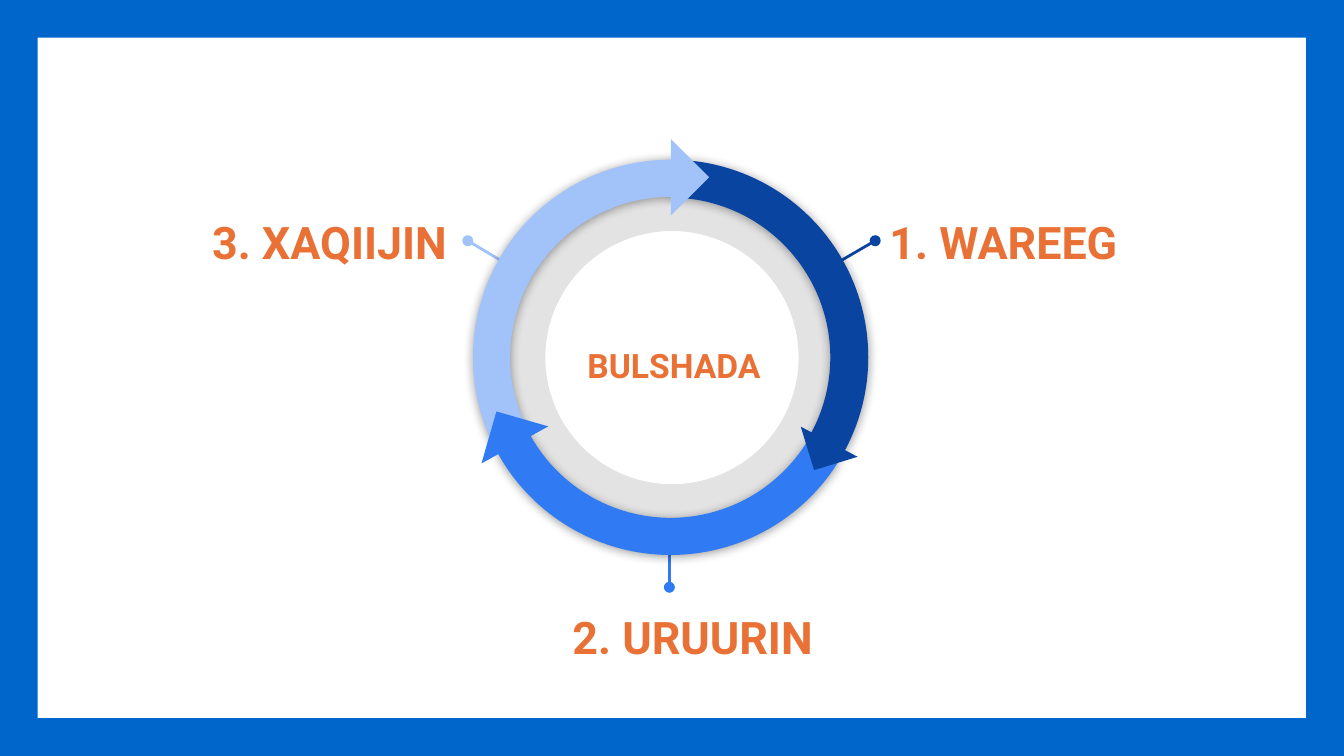
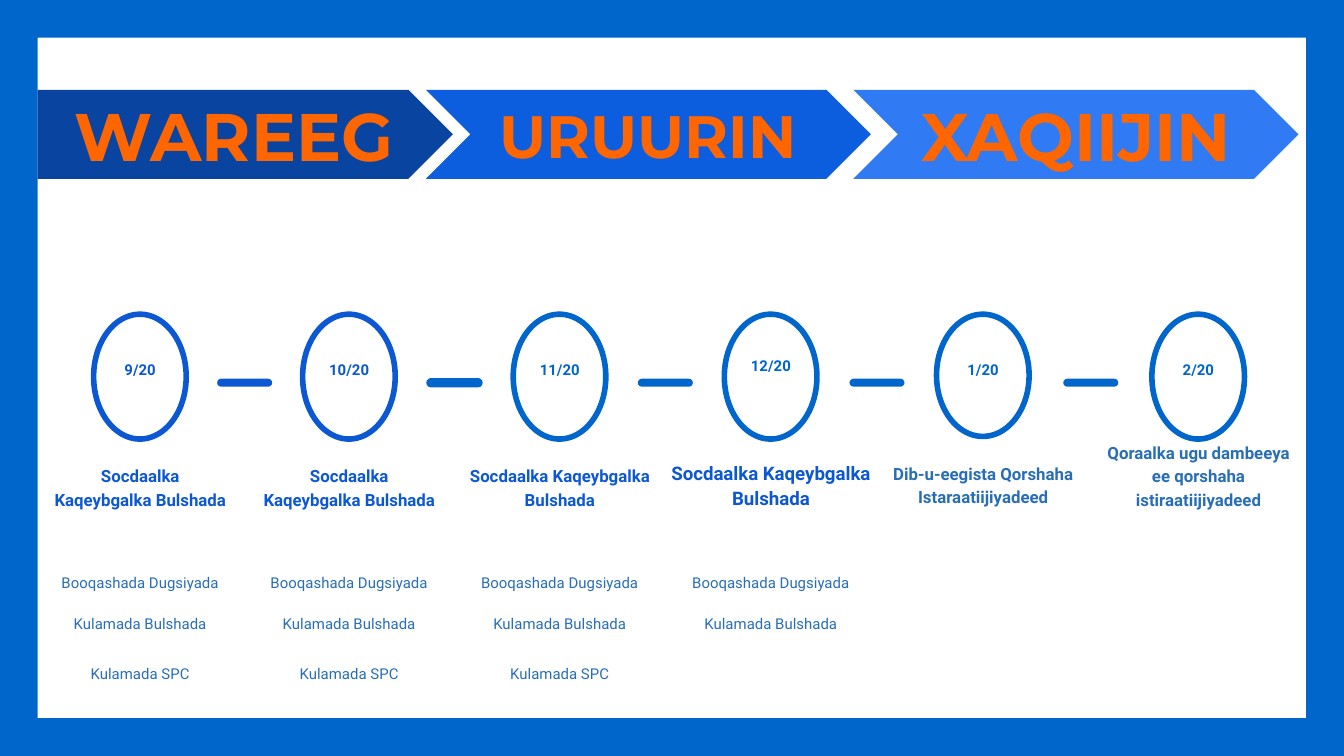
from dataclasses import dataclass

from lxml import etree
from pptx import Presentation
from pptx.dml.color import RGBColor
from pptx.enum import shapes, text
from pptx.oxml.ns import qn
from pptx.util import Cm, Pt

SHAPE = shapes.MSO_SHAPE
ANCHOR = text.MSO_ANCHOR
ALIGN = text.PP_ALIGN

FRAME_BLUE = "0066CC"
NAVY = "0944A1"
ROYAL = "0C58D3"
BANNER_BLUE = "0D5DDF"
BRIGHT = "307BF3"
PALE = "A1C3FA"
STEEL = "286EB7"
ORANGE = "E97135"
VIVID_ORANGE = "FF6600"


def color(value):
    return RGBColor.from_string(value)


def add_xml(parent, tag, **attributes):
    """Append a DrawingML element and return it."""
    return etree.SubElement(parent, qn(f"a:{tag}"), attributes)


@dataclass
class Span:
    """How a piece of text looks."""
    size: float
    color: str
    bold: bool = True
    font: str = "Roboto"


class Painter:
    def __init__(self):
        self.deck = Presentation()
        self.deck.slide_width = Cm(25.4)
        self.deck.slide_height = Cm(14.29)
        self.layout = self.deck.slide_layouts[6]
        self.page = None

    def new_page(self):
        self.page = self.deck.slides.add_slide(self.layout)

    def frame_layout(self):
        """Put the blue frame on the layout that every slide uses."""
        frame = self.shape(SHAPE.FRAME, 0, 0, 25.4, 14.29, FRAME_BLUE, adjust=[0.05])
        self.layout.shapes.element.append(frame.element)

    def shape(self, kind, left, top, width, height, fill=None, line=None,
              weight=0.75, adjust=(), rotation=0, flip=False):
        shape = self.page.shapes.add_shape(
            kind, Cm(left), Cm(top), Cm(width), Cm(height))
        shape.shadow.inherit = False
        shape.rotation = rotation
        for index, value in enumerate(adjust):
            shape.adjustments[index] = value
        if fill:
            shape.fill.solid()
            shape.fill.fore_color.rgb = color(fill)
        else:
            shape.fill.background()
        if line:
            shape.line.color.rgb = color(line)
            shape.line.width = Pt(weight)
        else:
            shape.line.fill.background()
        if flip:
            shape.element.spPr.get_or_add_xfrm().set("flipH", "1")
        return shape

    def fade(self, shape, percent):
        """Make a solid fill see-through."""
        solid = shape.element.spPr.find(qn("a:solidFill"))
        add_xml(solid[0], "alpha", val=str(percent * 1000))

    def soft_shadow(self, shape):
        effects = shape.element.spPr.find(qn("a:effectLst"))
        shadow = add_xml(effects, "outerShdw", blurRad=str(Pt(5.6)),
                         dist=str(Pt(0.8)), dir="5400000", rotWithShape="0")
        add_xml(add_xml(shadow, "srgbClr", val="000000"), "alpha", val="40000")

    def pin(self, dot, tip, line):
        """Draw a line that starts with a round dot."""
        pin = self.page.shapes.add_connector(
            shapes.MSO_CONNECTOR.STRAIGHT, *(Cm(v) for v in dot + tip))
        pin.line.color.rgb = color(line)
        pin.line.width = Pt(1.5)
        add_xml(pin.element.spPr.find(qn("a:ln")), "headEnd", type="oval")
        add_xml(pin.element.spPr, "effectLst")

    def put_text(self, box, lines, style, align=ALIGN.CENTER, anchor=ANCHOR.TOP,
                 spacing=1.15, before=()):
        """Fill a box with paragraphs; before gives the points above each."""
        frame = box.text_frame
        frame.word_wrap = True
        frame.vertical_anchor = anchor
        frame.margin_left = frame.margin_right = Cm(0.25)
        frame.margin_top = frame.margin_bottom = Cm(0.25)
        for index, line in enumerate(lines):
            para = frame.add_paragraph() if index else frame.paragraphs[0]
            para.alignment = align
            para.line_spacing = spacing
            if before:
                para.space_before = Pt(before[index])
            span = para.add_run()
            span.text = line
            span.font.name = style.font
            span.font.size = Pt(style.size)
            span.font.bold = style.bold
            span.font.color.rgb = color(style.color)

    def label(self, left, top, width, height, lines, style, **options):
        box = self.page.shapes.add_textbox(
            Cm(left), Cm(top), Cm(width), Cm(height))
        self.put_text(box, lines, style, **options)


def draw_cycle(painter):
    halo = painter.shape(SHAPE.DONUT, 9.17, 3.23, 7.06, 7.06, "000000", adjust=[0.161])
    painter.fade(halo, 11)

    stages = [
        ("3. XAQIIJIN", 3.76, 3.66, 5.05, (8.84, 4.55), (10.03, 5.26), PALE),
        ("1. WAREEG", 16.56, 3.66, 5.38, (16.54, 4.55), (15.32, 5.26), NAVY),
        ("2. URUURIN", 10.57, 11.13, 6.63, (12.65, 11.1), (12.65, 9.83), BRIGHT),
    ]
    for name, left, top, width, dot, tip, tint in stages:
        painter.pin(dot, tip, tint)
        painter.label(left, top, width, 1.85, [name], Span(24, ORANGE), align=ALIGN.LEFT)
    painter.label(10.34, 5.72, 4.8, 2.24, ["BULSHADA"], Span(18, ORANGE),
                  anchor=ANCHOR.MIDDLE)

    def arc(tint, rotation, adjust, flip=True):
        ring = painter.shape(SHAPE.BLOCK_ARC, 8.94, 3.02, 7.47, 7.47, tint,
                             adjust=adjust, rotation=rotation, flip=flip)
        painter.soft_shadow(ring)

    def arrowhead(tint, left, top, side, rotation):
        painter.shape(SHAPE.RIGHT_TRIANGLE, left, top, side, side, tint, rotation=rotation)

    arc(NAVY, 30, [144.14, 0.01, 0.096], flip=False)
    arc(PALE, 330, [143.49, 214.73, 0.094])
    arrowhead(PALE, 12.17, 2.84, 1.02, 225)
    arc(BRIGHT, 210, [143.16, 215.03, 0.094])
    arrowhead(NAVY, 15.24, 7.92, 0.86, 342.9)
    arrowhead(BRIGHT, 9.22, 7.9, 1.02, 106)


@dataclass
class Month:
    date: str
    center: float
    heading: str
    activities: int = 0
    ring: str = FRAME_BLUE
    tint: str = ROYAL
    width: float = 4.01
    date_top: float = 6.58
    oval_height: float = 2.36
    heading_top: float = 8.1
    heading_size: int = 9
    anchor: ANCHOR = ANCHOR.BOTTOM


def draw_timeline(painter):
    journey = "Socdaalka Kaqeybgalka Bulshada"
    activities = ["Booqashada Dugsiyada", "Kulamada Bulshada", "Kulamada SPC"]
    months = [
        Month("9/20", 2.65, journey, 3, ring=ROYAL, width=3.86),
        Month("10/20", 6.6, journey, 3, ring=ROYAL, width=3.86),
        Month("11/20", 10.58, journey, 3),
        Month("12/20", 14.57, journey, 2, width=4.42, date_top=6.5,
              heading_top=8.41, heading_size=10, anchor=ANCHOR.TOP),
        Month("1/20", 18.58, "Dib-u-eegista Qorshaha Istaraatiijiyadeed",
              tint=STEEL, oval_height=2.31, heading_top=8.05),
        Month("2/20", 22.65, "Qoraalka ugu dambeeya ee qorshaha istiraatiijiyadeed",
              tint=STEEL),
    ]
    for month in months:
        left = month.center - month.width / 2
        painter.shape(SHAPE.OVAL, month.center - 0.88, 5.94, 1.75,
                      month.oval_height, line=month.ring, weight=3)
        painter.label(month.center - 0.7, month.date_top, 1.4, 1.27,
                      [month.date], Span(8, month.ring))
        painter.label(left, month.heading_top, month.width, 1.78, [month.heading],
                      Span(month.heading_size, month.tint), anchor=month.anchor)
        if month.activities:
            painter.label(left, 10.54, month.width, 2.92,
                          activities[:month.activities],
                          Span(8, STEEL, bold=False), before=(0, 11, 16))

    for index, (month, following) in enumerate(zip(months, months[1:])):
        middle = (month.center + following.center) / 2
        tint = FRAME_BLUE if index else ROYAL
        painter.shape(SHAPE.ROUNDED_RECTANGLE, middle - 0.52, 7.16, 1.04, 0.15,
                      tint, line=tint if index == 1 else None, adjust=[0.5])

    banners = [
        ("WAREEG", SHAPE.PENTAGON, 0.71, 7.85, NAVY, 36),
        ("URUURIN", SHAPE.CHEVRON, 8.05, 8.41, BANNER_BLUE, 32),
        ("XAQIIJIN", SHAPE.CHEVRON, 16.13, 8.41, BRIGHT, 36),
    ]
    for name, kind, left, width, fill, size in banners:
        banner = painter.shape(kind, left, 1.7, width, 1.68, fill, adjust=[0.5])
        painter.put_text(banner, [name], Span(size, VIVID_ORANGE, font="Montserrat"),
                         anchor=ANCHOR.MIDDLE, spacing=1.0, before=(6,))


def main():
    painter = Painter()
    painter.new_page()
    painter.frame_layout()
    draw_cycle(painter)
    painter.new_page()
    draw_timeline(painter)
    painter.deck.save("out.pptx")


if __name__ == "__main__":
    main()
